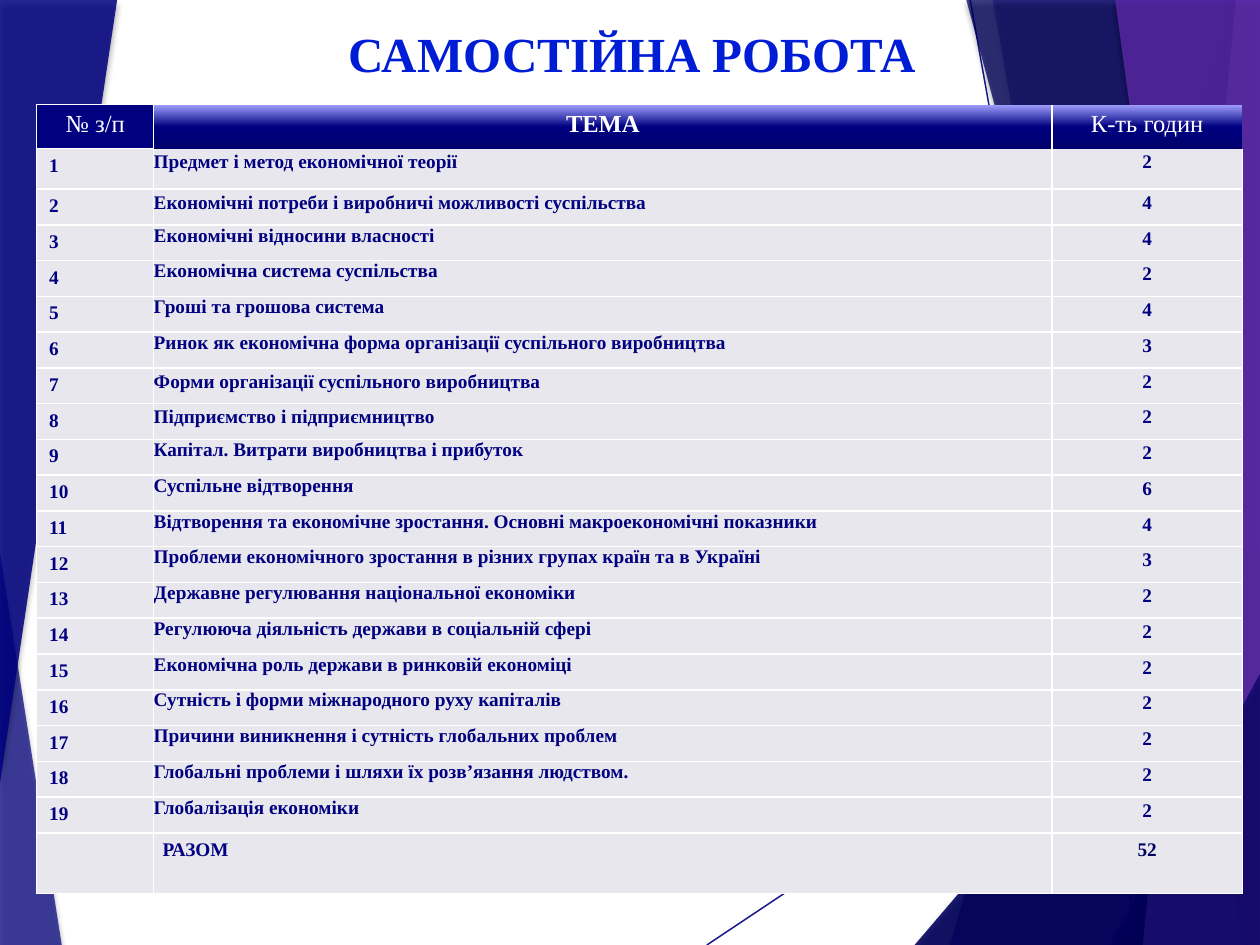
from lxml import etree
from pptx import Presentation
from pptx import util as u
from pptx.dml.color import RGBColor
from pptx.enum import shapes, text
from pptx.oxml import ns

NAVY = RGBColor(0x00, 0x00, 0x80)
DEEP = RGBColor(0x00, 0x00, 0x60)
DARK = RGBColor(0x00, 0x00, 0x6D)
SKY = RGBColor(0xA0, 0xA0, 0xFF)
VIOLET = RGBColor(0x7B, 0x46, 0xD0)
PURPLE = RGBColor(0x5A, 0x2A, 0xA6)
BLUE = RGBColor(0x00, 0x1D, 0xD6)
PALE = RGBColor(0xE7, 0xE7, 0xED)
WHITE = RGBColor(0xFF, 0xFF, 0xFF)
BLACK = RGBColor(0x00, 0x00, 0x00)

LEFT, CENTER, JUSTIFY = text.PP_ALIGN.LEFT, text.PP_ALIGN.CENTER, text.PP_ALIGN.JUSTIFY
LOOSE = 1.14
PLAIN_STYLE = "{2D5ABB26-0587-4C30-8999-92F81FD0307C}"

HEADINGS = ["№ з/п", "ТЕМА", "К-ть годин"]
TOPICS = [
    ("Предмет і метод економічної теорії", 2),
    ("Економічні потреби і виробничі можливості суспільства", 4),
    ("Економічні відносини власності", 4),
    ("Економічна система суспільства", 2),
    ("Гроші та грошова система", 4),
    ("Ринок як економічна форма організації суспільного виробництва", 3),
    ("Форми організації суспільного виробництва", 2),
    ("Підприємство і підприємництво", 2),
    ("Капітал. Витрати виробництва і прибуток", 2),
    ("Суспільне відтворення", 6),
    ("Відтворення та економічне зростання. Основні макроекономічні показники", 4),
    ("Проблеми економічного зростання в різних групах країн та в Україні", 3),
    ("Державне регулювання національної економіки", 2),
    ("Регулююча діяльність держави в соціальній сфері", 2),
    ("Економічна роль держави в ринковій економіці", 2),
    ("Сутність і форми міжнародного руху капіталів", 2),
    ("Причини виникнення і сутність глобальних проблем", 2),
    ("Глобальні проблеми і шляхи їх розв’язання людством.", 2),
    ("Глобалізація економіки", 2),
]
LOOSE_TOPICS = {1, 2, 7, 8}
LEFT_TOPICS = {7, 8, 9}

LOWER_LEFT = [(0, 58.5), (4.9, 100), (0, 100)]
UPPER_LEFT = [(0, 0), (9.3, 0), (0, 82.9)]
RAYS = [((56.1, 100), (100, 61)), ((77, 0), (90.4, 100))]
RIGHT_PANELS = [
    ([(97.5, 0), (75.4, 100), (100, 100), (100, 0)], NAVY, 36),
    ([(78.8, 0), (91.9, 100), (100, 100), (100, 0)], NAVY, 20),
    ([(72.6, 100), (100, 57.2), (100, 100)], DEEP, 66),
    ([(76.7, 0), (96.9, 100), (100, 100), (100, 0)], DEEP, 50),
    ([(98.1, 0), (90.7, 100), (100, 100), (100, 0)], VIOLET, 70),
    ([(88.5, 0), (98.8, 100), (100, 100), (100, 0)], PURPLE, 82),
    ([(88.2, 100), (100, 71.3), (100, 100)], DEEP, 66),
]


def add(parent, tag, **attributes):
    """Append a DrawingML element and return it."""
    values = {key: str(value) for key, value in attributes.items()}
    return etree.SubElement(parent, ns.qn(f"a:{tag}"), values)


def add_color(parent, color, opacity=100):
    """Append a colour with its opacity in percent."""
    add(add(parent, "srgbClr", val=color), "alpha", val=opacity * 1000)


def write(frame, words, size=11, color=NAVY, bold=True, align=LEFT, spacing=None):
    """Put one formatted paragraph into a text frame."""
    para = frame.paragraphs[0]
    para.alignment = align
    if spacing:
        para.line_spacing = spacing
    span = para.add_run()
    span.text = words
    span.font.name = "Times New Roman"
    span.font.size = u.Pt(size)
    span.font.bold = bold
    span.font.color.rgb = color


class Board:
    """Current slide and its style, measured in percent of the slide size."""

    def __init__(self, deck):
        self.width, self.height = deck.slide_width, deck.slide_height
        self.page = deck.slides.add_slide(deck.slide_layouts[6])

    def x(self, share):
        return round(self.width * share / 100)

    def y(self, share):
        return round(self.height * share / 100)

    def panel(self, points, color, opacity):
        corners = [(self.x(across), self.y(down)) for across, down in points]
        builder = self.page.shapes.build_freeform(*corners[0])
        builder.add_line_segments(corners[1:], close=True)
        shape = builder.convert_to_shape()
        shape.fill.solid()
        shape.fill.fore_color.rgb = color
        fill_color = shape._element.spPr.find(f".//{ns.qn('a:srgbClr')}")
        add(fill_color, "alpha", val=opacity * 1000)
        shape.line.fill.background()
        shape.shadow.inherit = False
        effects = shape._element.spPr.find(ns.qn("a:effectLst"))
        shadow = add(effects, "outerShdw", blurRad=u.Pt(3), dist=u.Pt(2), dir=5400000)
        add_color(shadow, BLACK, 35)

    def ray(self, start, end):
        line = self.page.shapes.add_connector(
            shapes.MSO_CONNECTOR.STRAIGHT,
            self.x(start[0]), self.y(start[1]), self.x(end[0]), self.y(end[1]))
        line.line.width = u.Pt(0.75)
        line.line.color.rgb = NAVY
        properties = line._element.spPr
        add(properties.find(f".//{ns.qn('a:srgbClr')}"), "alpha", val=70000)
        add(properties, "effectLst")

    def backdrop(self):
        for start, end in RAYS:
            self.ray(start, end)
        for points, color, opacity in RIGHT_PANELS:
            self.panel(points, color, opacity)

    def title(self, words, left, top, width, height):
        box = self.page.shapes.add_textbox(
            self.x(left), self.y(top), self.x(width), self.y(height))
        box.text_frame.word_wrap = True
        box.text_frame.auto_size = text.MSO_AUTO_SIZE.SHAPE_TO_FIT_TEXT
        write(box.text_frame, words, size=28, color=BLUE, align=CENTER)

    def table(self, left, top, columns, rows):
        frame = self.page.shapes.add_table(
            len(rows), len(columns), self.x(left), self.y(top),
            self.x(sum(columns)), self.y(sum(rows)))
        table = frame.table
        table.first_row = table.horz_banding = False
        table._tbl.tblPr.find(ns.qn("a:tableStyleId")).text = PLAIN_STYLE
        for column, share in zip(table.columns, columns):
            column.width = self.x(share)
        for row, share in zip(table.rows, rows):
            row.height = self.y(share)
        return table

    def cell(self, cell, words, inset=None, fill=PALE, sides="LRTB", **style):
        if inset is not None:
            cell.margin_left = cell.margin_right = u.Inches(inset)
            cell.margin_top = cell.margin_bottom = u.Inches(min(inset, 0.05))
        properties = cell._tc.get_or_add_tcPr()
        for side in sides:
            border = add(properties, f"ln{side}", w=u.Pt(0.96))
            add_color(add(border, "solidFill"), WHITE)
        if fill is None:
            gradient = add(properties, "gradFill", rotWithShape=1)
            stops = add(gradient, "gsLst")
            for position, color in ((0, SKY), (50, NAVY), (100, DARK)):
                add_color(add(stops, "gs", pos=position * 1000), color)
            add(gradient, "lin", ang=5400000, scaled=0)
        else:
            cell.fill.solid()
            cell.fill.fore_color.rgb = fill
        if words:
            write(cell.text_frame, words, **style)


def main():
    deck = Presentation()
    deck.slide_width, deck.slide_height = u.Inches(10), u.Inches(7.5)
    board = Board(deck)
    board.panel(LOWER_LEFT, NAVY, 70)
    board.backdrop()
    board.backdrop()
    board.panel(UPPER_LEFT, NAVY, 85)
    board.title("САМОСТІЙНА РОБОТА", 25.2, 1.87, 50, 7.6)

    rows = [4.67, 4.27] + [3.78] * (len(TOPICS) - 1) + [6.4]
    table = board.table(2.9, 11.07, [9.3, 71.3, 15.1], rows)
    for column, (words, fill, sides) in enumerate(
            zip(HEADINGS, (NAVY, None, None), ("LRTB", "L", ""))):
        board.cell(table.cell(0, column), words, fill=fill, sides=sides,
                   size=14, color=WHITE, bold=column == 1, align=CENTER)
    for number, (topic, hours) in enumerate(TOPICS, 1):
        sides = "LRB" if number == 1 else "LRTB"
        board.cell(table.cell(number, 0), str(number))
        board.cell(table.cell(number, 1), topic, inset=0, sides=sides,
                   align=LEFT if number in LEFT_TOPICS else JUSTIFY,
                   spacing=LOOSE if number in LOOSE_TOPICS else None)
        board.cell(table.cell(number, 2), str(hours), inset=0, sides=sides,
                   align=CENTER, spacing=LOOSE)
    last = len(TOPICS) + 1
    total = sum(hours for _, hours in TOPICS)
    board.cell(table.cell(last, 0), "")
    board.cell(table.cell(last, 1), "РАЗОМ", inset=0.07)
    board.cell(table.cell(last, 2), str(total), inset=0.07, color=DEEP, align=CENTER)
    deck.save("out.pptx")


if __name__ == "__main__":
    main()
